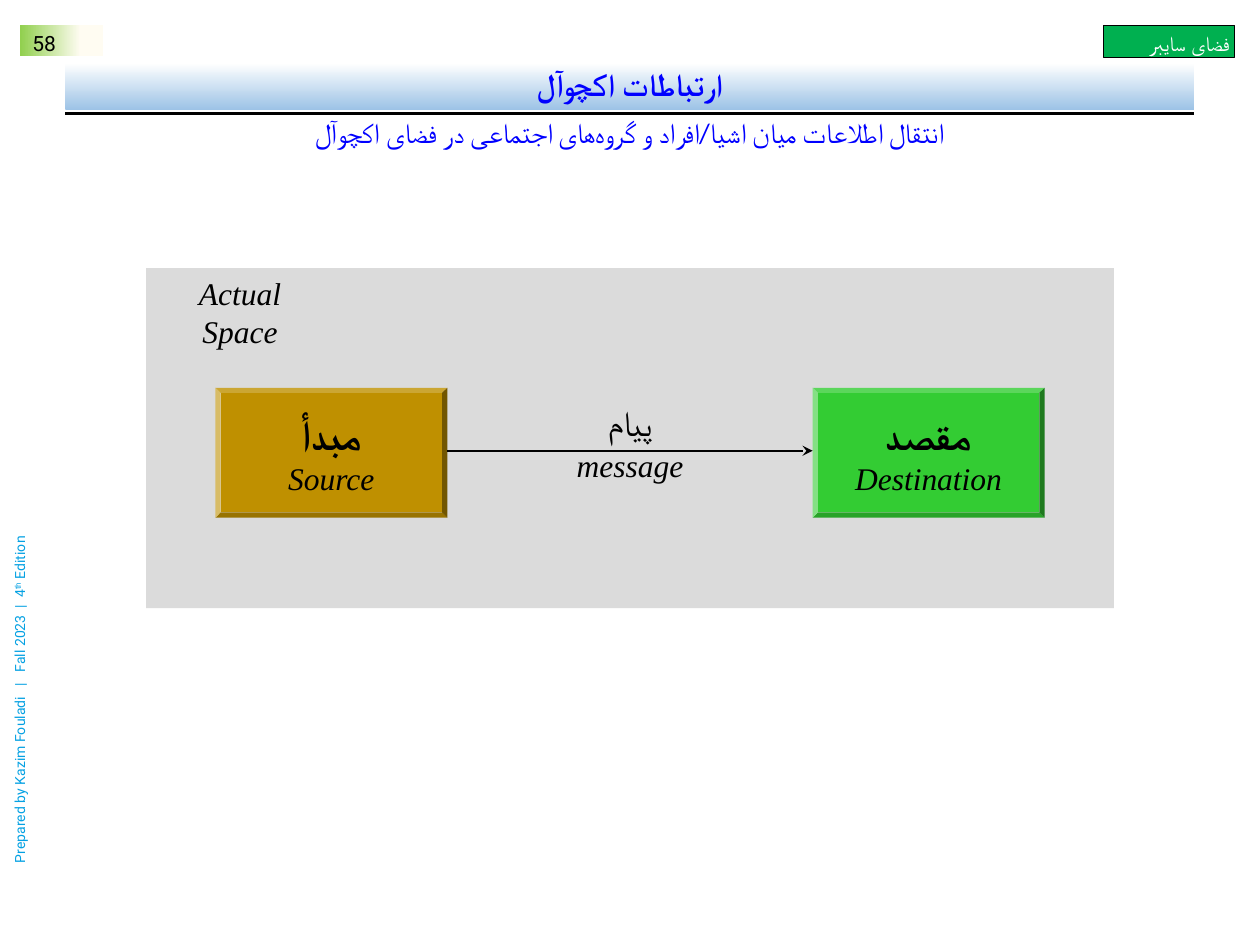
from lxml import etree
from pptx import Presentation
from pptx.dml.color import RGBColor
from pptx.enum import shapes, text
from pptx.oxml.ns import qn
from pptx.util import Pt

COLORS = {
    "black": "000000", "white": "FFFFFF", "blue": "0000FF", "sky": "9DC3E6",
    "cream": "FFFCF2", "lime": "92D050", "tag": "00B050", "credit": "04A1E3",
    "panel": "DBDBDB", "source": "BF9000", "destination": "33CC33",
}
LATIN = "Times New Roman"
PERSIAN = "Calibri"
NON_JOINER = chr(0x200C)
DEFAULT_INSETS = (7.2, 3.6, 7.2, 3.6)
ALIGN = text.PP_ALIGN
ANCHOR = text.MSO_ANCHOR


def rgb(name):
    return RGBColor.from_string(COLORS[name])


def place(shape, left, top, width, height):
    shape.left, shape.top, shape.width, shape.height = map(Pt, (left, top, width, height))


def set_frame(shape, anchor=ANCHOR.TOP, insets=DEFAULT_INSETS):
    frame = shape.text_frame
    frame.word_wrap = True
    frame.auto_size = text.MSO_AUTO_SIZE.NONE
    frame.vertical_anchor = anchor
    (frame.margin_left, frame.margin_top,
     frame.margin_right, frame.margin_bottom) = map(Pt, insets)
    return frame


def style_run(span, font, size, color, bold=False, italic=False):
    span.font.name, span.font.size = font, Pt(size)
    span.font.bold, span.font.italic = bold, italic
    span.font.color.rgb = rgb(color)
    complex_font = etree.SubElement(span.font._element, qn("a:cs"))
    complex_font.set("typeface", font)


def write(para, words, font, size, color="black", align=ALIGN.CENTER, rtl=False, **style):
    para.text = words
    para.alignment = align
    if rtl:
        para._p.get_or_add_pPr().set("rtl", "1")
    for span in para.runs:
        style_run(span, font, size, color, **style)


def add_box(page, kind, box, fill=None):
    shape = page.shapes.add_shape(kind, *map(Pt, box))
    shape.shadow.inherit = False
    shape.line.fill.background()
    if fill:
        shape.fill.solid()
        shape.fill.fore_color.rgb = rgb(fill)
    return shape


def add_label(page, box, words, font, size, **style):
    label = page.shapes.add_textbox(*map(Pt, box))
    write(set_frame(label).paragraphs[0], words, font, size, **style)
    return label


def fill_gradient(shape, angle, *stops):
    shape.fill.gradient()
    shape.fill.gradient_angle = angle
    for stop, (position, color) in zip(shape.fill.gradient_stops, stops):
        stop.position = position
        stop.color.rgb = rgb(color)


def add_line(page, start, end, width, head=None):
    line = page.shapes.add_connector(shapes.MSO_CONNECTOR.STRAIGHT, *map(Pt, start + end))
    line.line.color.rgb = rgb("black")
    line.line.width = Pt(width)
    if head:
        etree.SubElement(line.line._get_or_add_ln(), qn("a:tailEnd")).set("type", head)
    etree.SubElement(line._element.spPr, qn("a:effectLst"))


def add_header(page, left, top, width):
    title, body = page.placeholders
    place(title, left, top, width, 26.6)
    fill_gradient(title, 270, (0, "white"), (1, "sky"))
    heading = set_frame(title, ANCHOR.MIDDLE).paragraphs[0]
    write(heading, "ارتباطات اکچوآل", PERSIAN, 18, "blue", rtl=True, bold=True)
    heading.line_spacing = 0.9

    place(body, left, top + 31, width, 21)
    subtitle = set_frame(body, insets=(7.2, 1.4, 7.2, 3.6)).paragraphs[0]
    subtitle.line_spacing, subtitle.space_before = 0.9, Pt(0)
    properties = subtitle._p.get_or_add_pPr()
    properties.set("marL", "0")
    properties.set("indent", "0")
    etree.SubElement(properties, qn("a:buNone"))
    write(subtitle,
          f"انتقال اطلاعات میان اشیا/افراد و گروه{NON_JOINER}های اجتماعی در فضای اکچوآل",
          PERSIAN, 16, "blue", rtl=True)

    add_line(page, (left, top + 28.8), (left + width, top + 28.8), 1.5)


def add_page_number(page, box):
    number = add_box(page, shapes.MSO_SHAPE.RECTANGLE, box)
    fill_gradient(number, 180, (0.27, "cream"), (0.99, "lime"))
    frame = set_frame(number, insets=(7.2, 2.9, 7.2, 0))
    write(frame.paragraphs[0], "58", "Roboto", 12, align=ALIGN.LEFT)


def add_topic_tag(page, box):
    tag = add_box(page, shapes.MSO_SHAPE.RECTANGLE, box, "tag")
    tag.line.color.rgb = rgb("black")
    tag.line.width = Pt(0.5)
    frame = set_frame(tag, ANCHOR.MIDDLE, (2.9, 5.8, 2.9, 3.6))
    write(frame.paragraphs[0], "فضای سایبر", "Arial", 12, "white", ALIGN.RIGHT)


def add_credit(page, box):
    credit = add_label(page, box, "Prepared by Kazim Fouladi   |   Fall 2023  |  4",
                       "Roboto", 8, color="credit", align=ALIGN.LEFT)
    credit.rotation = 270
    para = credit.text_frame.paragraphs[0]
    for words, baseline in (("th", "30000"), (" Edition", "0")):
        span = para.add_run()
        span.text = words
        style_run(span, "Roboto", 8, "credit")
        span.font._element.set("baseline", baseline)


def add_node(page, box, persian, english, fill):
    node = add_box(page, shapes.MSO_SHAPE.BEVEL, box, fill)
    node.adjustments[0] = 0.04
    frame = set_frame(node, ANCHOR.MIDDLE, (2.9,) * 4)
    write(frame.paragraphs[0], persian, PERSIAN, 24, rtl=True, bold=True)
    write(frame.add_paragraph(), english, LATIN, 18, rtl=True, italic=True)


def add_message_diagram(page, left, top, width, height):
    """Panel with a source and a destination joined by a labelled arrow."""
    add_box(page, shapes.MSO_SHAPE.RECTANGLE, (left, top, width, height), "panel")
    add_label(page, (left, top, 107.3, 51), "Actual Space", LATIN, 18, italic=True)

    node_width, node_height, margin = 132.5, 74.2, 39.6
    node_top = top + 68.4
    source_left = left + margin
    destination_left = left + width - margin - node_width
    add_node(page, (source_left, node_top, node_width, node_height),
             "مبدأ", "Source", "source")
    add_node(page, (destination_left, node_top, node_width, node_height),
             "مقصد", "Destination", "destination")

    middle, arrow_y = left + width / 2, node_top + 36
    add_label(page, (middle - 53.6, arrow_y - 6.5, 107.3, 29), "message",
              LATIN, 18, italic=True)
    add_label(page, (middle - 63.4, arrow_y - 31.7, 126.7, 31.5), "پیام", PERSIAN, 20)
    add_line(page, (source_left + node_width, arrow_y), (destination_left, arrow_y),
             1.25, "stealth")


def main():
    deck = Presentation()
    deck.slide_width, deck.slide_height = Pt(720), Pt(540)
    page = deck.slides.add_slide(deck.slide_layouts[1])
    add_header(page, 37.4, 36, 645.1)
    add_page_number(page, (11.5, 14.6, 47.5, 17.3))
    add_topic_tag(page, (630.7, 14.4, 74.9, 18.3))
    add_credit(page, (-95, 385.2, 213.1, 17.3))
    add_message_diagram(page, 83.5, 153.2, 553, 194.4)
    deck.save("out.pptx")


if __name__ == "__main__":
    main()
